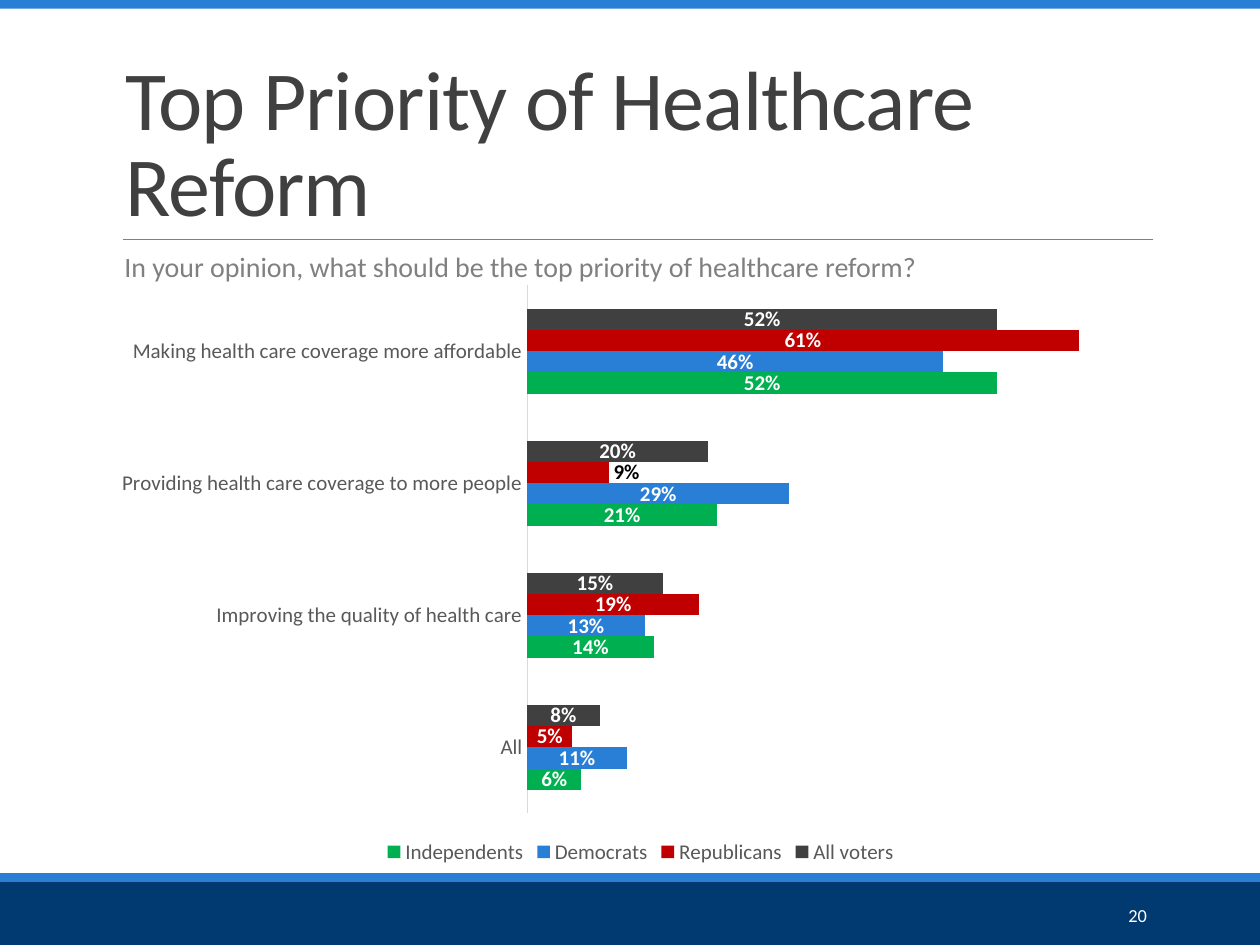
import pptx
import pptx.chart.data
import pptx.dml.color
import pptx.enum.chart
import pptx.enum.shapes
import pptx.enum.text
import pptx.oxml
import pptx.oxml.ns
import pptx.util

Pt = pptx.util.Pt
Align = pptx.enum.text.PP_ALIGN
Anchor = pptx.enum.text.MSO_ANCHOR
LabelPosition = pptx.enum.chart.XL_LABEL_POSITION

NAVY, BLUE, GRAY, DARK = "003A70", "297FD5", "808080", "404040"
WHITE, BLACK, AXIS_TEXT, AXIS_LINE = "FFFFFF", "000000", "595959", "D9D9D9"

CATEGORIES = [
    "Making health care coverage more affordable",
    "Providing health care coverage to more people",
    "Improving the quality of health care",
    "All",
]
VOTERS = [
    ("All voters", DARK, (0.52, 0.20, 0.15, 0.08)),
    ("Republicans", "C00000", (0.61, 0.09, 0.19, 0.05)),
    ("Democrats", BLUE, (0.46, 0.29, 0.13, 0.11)),
    ("Independents", "00B050", (0.52, 0.21, 0.14, 0.06)),
]


def color(hex_string):
    return pptx.dml.color.RGBColor.from_string(hex_string)


def format_font(font, size, fill, bold=False):
    font.name = SlideBuilder.FONT
    font.size = Pt(size)
    font.bold = bold
    font.color.rgb = color(fill)


def write_text(frame, text, size=12, fill=BLACK, align=Align.LEFT,
               anchor=Anchor.TOP, line_spacing=1.0, tracking=0):
    frame.word_wrap = True
    frame.vertical_anchor = anchor
    paragraph = frame.paragraphs[0]
    paragraph.alignment = align
    paragraph.line_spacing = line_spacing
    run = paragraph.add_run()
    run.text = text
    format_font(run.font, size, fill)
    if tracking:
        run.font._element.set("spc", str(int(tracking * 100)))


class SlideBuilder:
    FONT = "Calibri"

    def __init__(self, slide):
        self.shapes = slide.shapes

    def band(self, top, height, fill):
        shape = self.shapes.add_shape(
            pptx.enum.shapes.MSO_SHAPE.RECTANGLE, 0, Pt(top), Pt(720), Pt(height))
        shape.shadow.inherit = False
        shape.fill.solid()
        shape.fill.fore_color.rgb = color(fill)
        shape.line.fill.background()

    def rule(self, left, right, top):
        connector = self.shapes.add_connector(
            pptx.enum.shapes.MSO_CONNECTOR.STRAIGHT,
            Pt(left), Pt(top), Pt(right), Pt(top))
        connector.line.color.rgb = color(GRAY)
        connector.line.width = Pt(0.5)
        properties = connector._element.spPr
        properties.append(pptx.oxml.parse_xml(
            "<a:effectLst %s/>" % pptx.oxml.ns.nsdecls("a")))

    def text(self, left, top, width, height, text, **text_format):
        box = self.shapes.add_textbox(Pt(left), Pt(top), Pt(width), Pt(height))
        write_text(box.text_frame, text, **text_format)

    def bar_chart(self, left, top, width, height, categories, groups):
        data = pptx.chart.data.CategoryChartData(number_format="0%")
        data.categories = categories
        for name, _, values in groups:
            data.add_series(name, values)
        chart = self.shapes.add_chart(
            pptx.enum.chart.XL_CHART_TYPE.BAR_CLUSTERED,
            Pt(left), Pt(top), Pt(width), Pt(height), data).chart
        format_font(chart.font, 10, BLACK)
        chart.has_title = False

        # Legend
        chart.has_legend = True
        chart.legend.position = pptx.enum.chart.XL_LEGEND_POSITION.BOTTOM
        chart.legend.include_in_layout = False
        format_font(chart.legend.font, 12, AXIS_TEXT)

        # Axes
        axis = chart.category_axis
        axis.reverse_order = True
        axis.major_tick_mark = pptx.enum.chart.XL_TICK_MARK.NONE
        axis.format.line.color.rgb = color(AXIS_LINE)
        axis.format.line.width = Pt(0.75)
        format_font(axis.tick_labels.font, 12, AXIS_TEXT)
        scale = chart.value_axis
        scale.minimum_scale, scale.maximum_scale = 0, 0.7
        scale.has_major_gridlines = False
        scale.visible = False

        # Bars and their labels
        plot = chart.plots[0]
        plot.gap_width = 219
        plot.overlap = 0
        plot.vary_by_categories = False
        for series, (_, fill, _) in zip(plot.series, groups):
            series.format.fill.solid()
            series.format.fill.fore_color.rgb = color(fill)
            labels = series.data_labels
            labels.show_value = True
            labels.number_format = "0%"
            labels.number_format_is_linked = False
            labels.position = LabelPosition.CENTER
            format_font(labels.font, 12, WHITE, bold=True)
        self.plot_area(chart, x=0.395, y=0.02, w=0.586, h=0.886)
        return chart

    def plot_area(self, chart, **fractions):
        area = chart._chartSpace.chart.plotArea
        for layout in area.findall(pptx.oxml.ns.qn("c:layout")):
            area.remove(layout)
        sizes = "".join('<c:%s val="%s"/>' % item for item in fractions.items())
        area.insert(0, pptx.oxml.parse_xml(
            '<c:layout %s><c:manualLayout><c:layoutTarget val="inner"/>'
            '<c:xMode val="edge"/><c:yMode val="edge"/>%s'
            "</c:manualLayout></c:layout>" % (pptx.oxml.ns.nsdecls("c"), sizes)))


def main():
    presentation = pptx.Presentation()
    presentation.slide_width, presentation.slide_height = Pt(720), Pt(540)
    builder = SlideBuilder(
        presentation.slides.add_slide(presentation.slide_layouts[6]))

    # Frame of the slide
    builder.band(504, 36, NAVY)
    builder.band(499, 5, BLUE)
    builder.rule(70.5, 659, 136.8)
    builder.band(0, 5, BLUE)

    # Title, page number and question
    builder.text(64.8, 22.3, 594, 114.5, "Top Priority of Healthcare Reform",
                 size=48, fill=DARK, anchor=Anchor.BOTTOM,
                 line_spacing=0.85, tracking=-0.5)
    builder.text(584.6, 508.5, 77.8, 28.8, "20", size=10.5, fill=WHITE,
                 align=Align.RIGHT, anchor=Anchor.MIDDLE)
    builder.text(64, 139, 598.3, 26.6,
                 "In your opinion, what should be the top priority of "
                 "healthcare reform?", size=16, fill=GRAY)

    # Survey results
    chart = builder.bar_chart(57.6, 156.2, 617, 340.6, CATEGORIES, VOTERS)

    # The short Republican bar carries its label outside
    short_bar_label = chart.plots[0].series[1].points[1].data_label
    format_font(short_bar_label.font, 12, BLACK, bold=True)
    short_bar_label.position = LabelPosition.OUTSIDE_END

    presentation.save("out.pptx")


if __name__ == "__main__":
    main()
